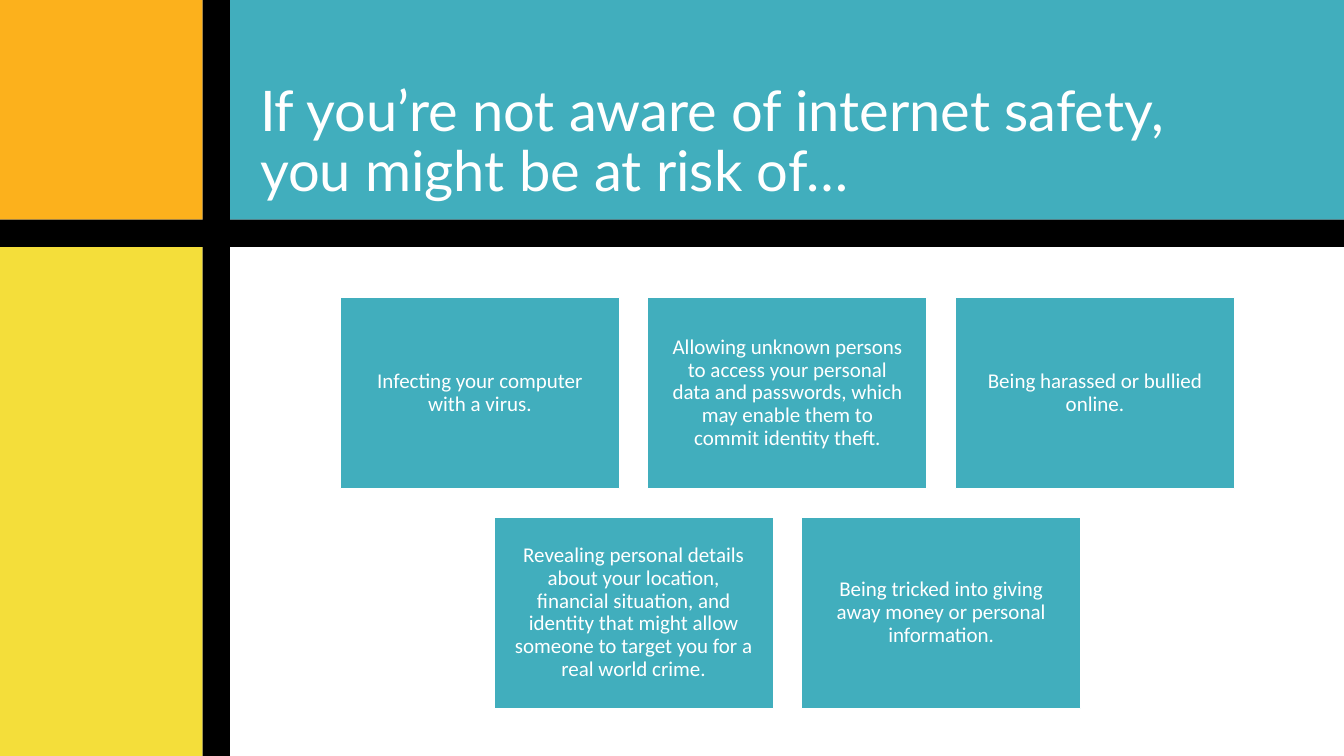
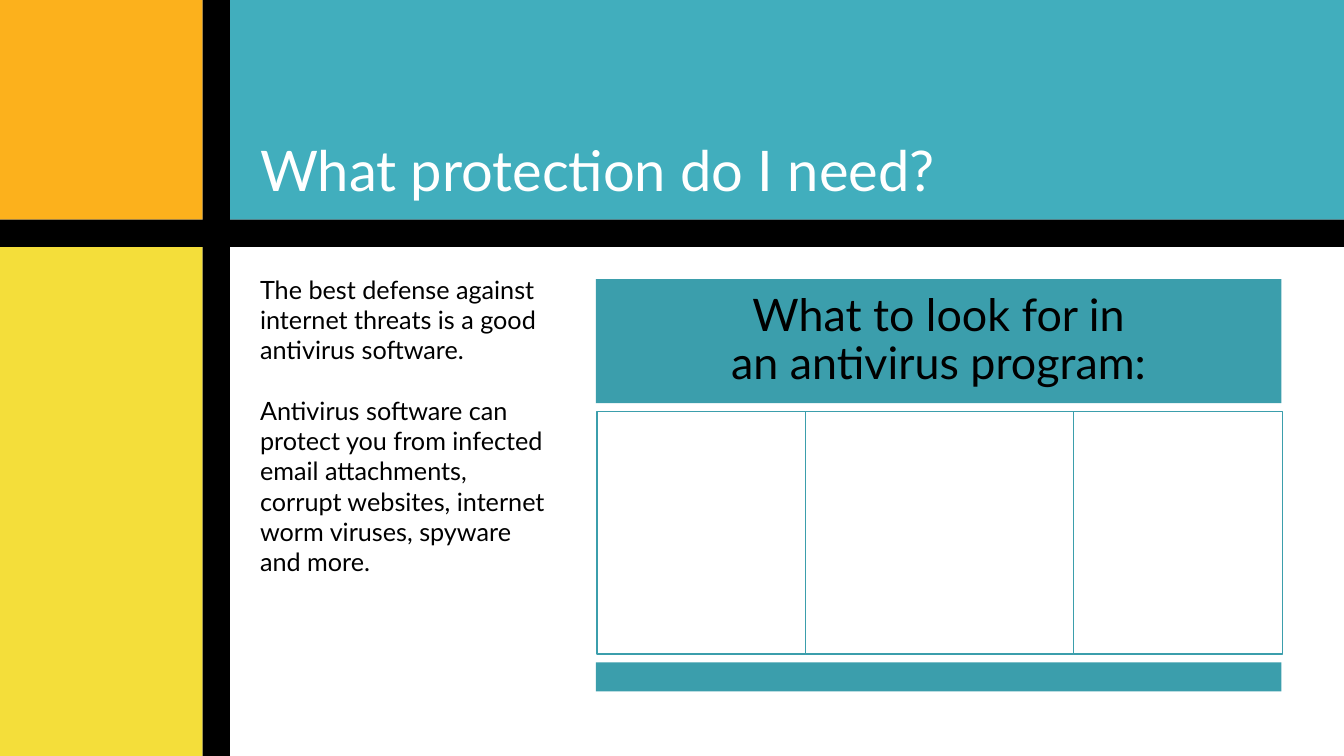
from dataclasses import dataclass
from typing import Optional

from pptx import Presentation
from pptx.dml.color import RGBColor
from pptx.enum import shapes, text
from pptx.util import Inches, Pt

TEAL = RGBColor(0x41, 0xAE, 0xBD)
DARK_TEAL = RGBColor(0x3B, 0x9E, 0xAC)
ORANGE = RGBColor(0xFC, 0xB1, 0x1C)
YELLOW = RGBColor(0xF4, 0xDE, 0x3A)
BLACK = RGBColor(0, 0, 0)
WHITE = RGBColor(0xFF, 0xFF, 0xFF)

PAGE_WIDTH, PAGE_HEIGHT = 13.33, 7.5
SIDE_WIDTH, HEADER_HEIGHT, BAR = 2.01, 2.18, 0.27
MAIN_LEFT = SIDE_WIDTH + BAR
MAIN_WIDTH = PAGE_WIDTH - MAIN_LEFT
BODY_TOP = HEADER_HEIGHT + BAR


@dataclass(frozen=True)
class Area:
    left: float
    top: float
    width: float
    height: float

    def lengths(self) -> list:
        return [Inches(n) for n in (self.left, self.top, self.width, self.height)]


@dataclass(frozen=True)
class Band:
    area: Area
    fill: RGBColor


@dataclass(frozen=True)
class TextStyle:
    font: str
    size: int
    color: RGBColor
    inset_x: float
    inset_y: float
    align: text.PP_ALIGN = text.PP_ALIGN.LEFT
    anchor: text.MSO_ANCHOR = text.MSO_ANCHOR.TOP
    line_spacing: float = 0.9
    gap: float = 0


BANDS = [
    Band(Area(MAIN_LEFT, 0, MAIN_WIDTH, HEADER_HEIGHT), TEAL),
    Band(Area(0, 0, SIDE_WIDTH, HEADER_HEIGHT), ORANGE),
    Band(Area(0, BODY_TOP, SIDE_WIDTH, PAGE_HEIGHT - BODY_TOP), YELLOW),
    Band(Area(0, HEADER_HEIGHT, PAGE_WIDTH, BAR), BLACK),
    Band(Area(SIDE_WIDTH, 0, BAR, PAGE_HEIGHT), BLACK),
]
TITLE_AREA = Area(MAIN_LEFT, 0.66, MAIN_WIDTH, 1.51)

TITLE = TextStyle("Lato", 40, WHITE, 0.3, 0.15, anchor=text.MSO_ANCHOR.BOTTOM)
CARD = TextStyle("Calibri", 15, WHITE, 0.2, 0.1,
                 text.PP_ALIGN.CENTER, text.MSO_ANCHOR.MIDDLE)
BODY = TextStyle("Lato", 18, BLACK, 0.3, 0.2, line_spacing=1, gap=21.6)
PANEL_HEADING = TextStyle("Lato", 32, BLACK, 0.13, 0.13,
                          text.PP_ALIGN.CENTER, text.MSO_ANCHOR.MIDDLE)

RISK_ROWS = [
    [
        "Infecting your computer with a virus.",
        "Allowing unknown persons to access your personal data and passwords, "
        "which may enable them to commit identity theft.",
        "Being harassed or bullied online.",
    ],
    [
        "Revealing personal details about your location, financial situation, "
        "and identity that might allow someone to target you for a real world crime.",
        "Being tricked into giving away money or personal information.",
    ],
]
PROTECTION = [
    "The best defense against internet threats is a good antivirus software.",
    "Antivirus software can protect you from infected email attachments, "
    "corrupt websites, internet worm viruses, spyware and more.",
]


def write(shape, paragraphs: list[str], style: TextStyle) -> None:
    frame = shape.text_frame
    frame.word_wrap = True
    frame.vertical_anchor = style.anchor
    frame.margin_left = frame.margin_right = Inches(style.inset_x)
    frame.margin_top = frame.margin_bottom = Inches(style.inset_y)
    for index, words in enumerate(paragraphs):
        para = frame.add_paragraph() if index else frame.paragraphs[0]
        para.text = words
        para.alignment = style.align
        para.line_spacing = style.line_spacing
        para.space_before = Pt(style.gap if index else 0)
        para.font.name = style.font
        para.font.size = Pt(style.size)
        para.font.color.rgb = style.color


def add_rectangle(page, area: Area, fill: RGBColor, line: Optional[RGBColor] = None):
    box = page.shapes.add_shape(shapes.MSO_SHAPE.RECTANGLE, *area.lengths())
    box.shadow.inherit = False
    box.fill.solid()
    box.fill.fore_color.rgb = fill
    if line is None:
        box.line.fill.background()
    else:
        box.line.color.rgb = line
        box.line.width = Pt(1)
    return box


def add_text(page, area: Area, paragraphs: list[str], style: TextStyle) -> None:
    write(page.shapes.add_textbox(*area.lengths()), paragraphs, style)


def add_page(deck, title: str):
    """Add a blank slide with the shared bands and its title."""
    page = deck.slides.add_slide(deck.slide_layouts[6])
    for band in BANDS:
        add_rectangle(page, band.area, band.fill)
    add_text(page, TITLE_AREA, [title], TITLE)
    return page


def build_risks(deck) -> None:
    page = add_page(deck, "If you’re not aware of internet safety,\n"
                          "you might be at risk of…")
    width, height, gap = 2.77, 1.9, 0.28
    center, top = 7.81, 2.95
    for row, risks in enumerate(RISK_ROWS):
        row_width = len(risks) * (width + gap) - gap
        for column, risk in enumerate(risks):
            area = Area(center - row_width / 2 + column * (width + gap),
                        top + row * (height + gap), width, height)
            write(add_rectangle(page, area, TEAL, WHITE), [risk], CARD)


def build_protection(deck) -> None:
    page = add_page(deck, "What protection do I need?")
    add_text(page, Area(MAIN_LEFT, 2.52, 3.44, 3.43), PROTECTION, BODY)

    left, width = 5.91, 6.8
    heading = add_rectangle(page, Area(left, 2.77, width, 1.23), DARK_TEAL)
    write(heading, ["What to look for in\nan antivirus program:"], PANEL_HEADING)
    column_left = left + 0.01
    for column_width in (2.07, 2.66, 2.07):
        add_rectangle(page, Area(column_left, 4.08, column_width, 2.41),
                      WHITE, DARK_TEAL)
        column_left += column_width
    add_rectangle(page, Area(left, 6.57, width, 0.29), DARK_TEAL)


def main() -> None:
    deck = Presentation()
    deck.slide_width = Inches(PAGE_WIDTH)
    deck.slide_height = Inches(PAGE_HEIGHT)
    build_risks(deck)
    build_protection(deck)
    deck.save("out.pptx")


if __name__ == "__main__":
    main()
